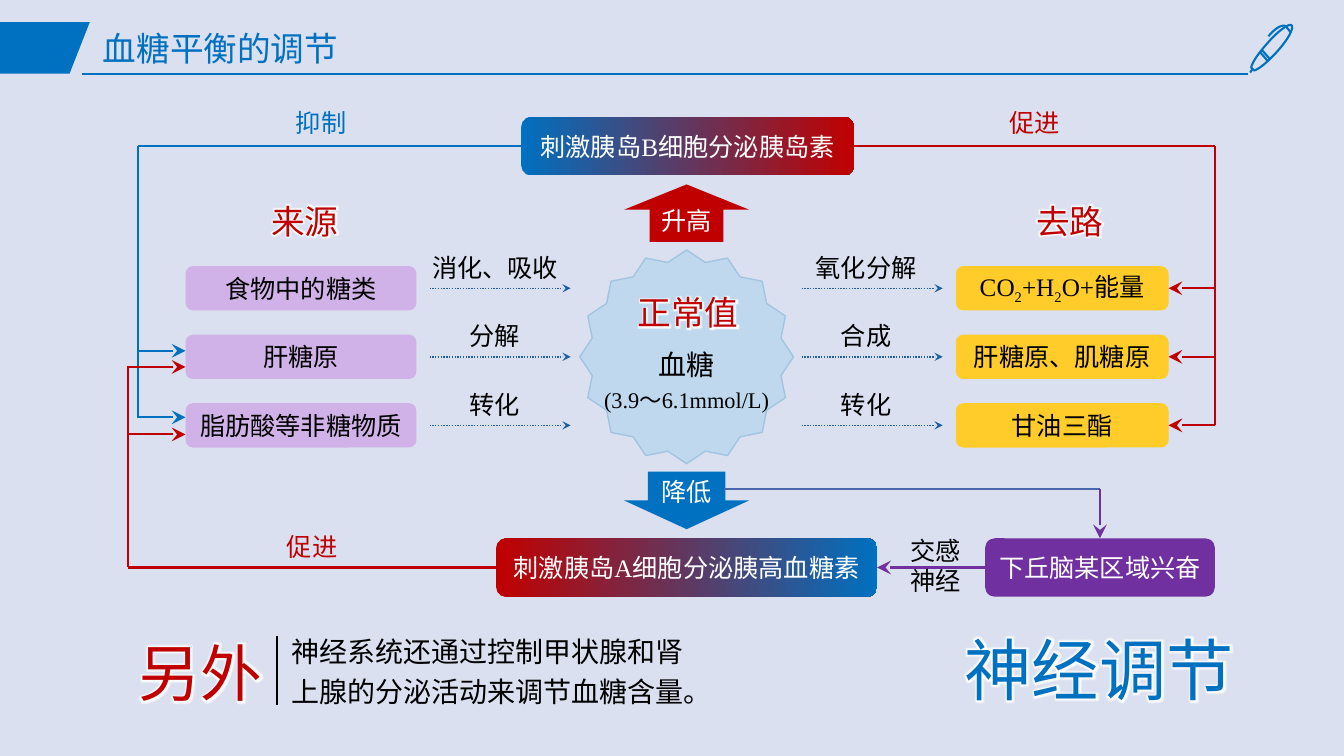
from dataclasses import dataclass

from lxml import etree
from pptx import Presentation
from pptx.dml.color import RGBColor
from pptx.enum.dml import MSO_LINE
from pptx.enum.shapes import MSO_CONNECTOR, MSO_SHAPE
from pptx.enum.text import MSO_ANCHOR, PP_ALIGN
from pptx.oxml.ns import qn
from pptx.shapes.autoshape import Shape
from pptx.shapes.connector import Connector
from pptx.slide import Slide
from pptx.text.text import TextFrame
from pptx.util import Inches, Pt

STRAIGHT, DOTTED = MSO_CONNECTOR.STRAIGHT, MSO_LINE.ROUND_DOT
ROUNDED, STAR = MSO_SHAPE.ROUNDED_RECTANGLE, MSO_SHAPE.STAR_16_POINT
UP, DOWN = MSO_SHAPE.UP_ARROW, MSO_SHAPE.DOWN_ARROW
LEFT, CENTER = PP_ALIGN.LEFT, PP_ALIGN.CENTER
TOP, MIDDLE = MSO_ANCHOR.TOP, MSO_ANCHOR.MIDDLE
SIDE_TOP, SIDE_LEFT, SIDE_RIGHT = 0, 1, 3

BACKGROUND = RGBColor(0xDA, 0xE0, 0xEF)
BLUE = RGBColor(0x00, 0x70, 0xC0)
RED = RGBColor(0xC0, 0x00, 0x00)
PURPLE = RGBColor(0x70, 0x30, 0xA0)
LILAC = RGBColor(0xD1, 0xB2, 0xE8)
YELLOW = RGBColor(0xFF, 0xCC, 0x29)
PALE_BLUE = RGBColor(0xC0, 0xD8, 0xED)
STAR_EDGE = RGBColor(0xA1, 0xC4, 0xE3)
DOT_BLUE = RGBColor(0x1F, 0x5F, 0xA0)
SLATE = RGBColor(0x4A, 0x66, 0xAC)
BLACK = RGBColor(0, 0, 0)
WHITE = RGBColor(0xFF, 0xFF, 0xFF)

SERIF, SANS = "Times New Roman", "Noto Sans CJK SC"
ROW_TOP, ROW_PITCH, ROW_HEIGHT = 2.64, 0.68, 0.44
Point = tuple[float, float]


@dataclass
class Box:
    text: str
    left: float
    top: float
    width: float
    height: float
    fill: tuple[RGBColor, ...]
    color: RGBColor = WHITE
    font: str = SERIF
    kind: int = ROUNDED
    adjustments: tuple[float, ...] = ()


@dataclass
class Label:
    text: str
    left: float
    top: float
    width: float
    height: float
    color: RGBColor = BLACK
    size: float = 18
    font: str = SANS
    align: int = CENTER
    wrap: bool = False
    glow: bool = False
    spacing: float = 1.0


@dataclass
class Line:
    start: Point
    end: Point
    color: RGBColor
    arrow: bool = False
    begin_box: Shape | None = None
    begin_side: int = 0
    end_box: Shape | None = None
    end_side: int = 0


def write(frame: TextFrame, lines: list[tuple[str, float]], font: str, color: RGBColor,
          align: int = CENTER, spacing: float = 1.0) -> None:
    for index, (text, size) in enumerate(lines):
        paragraph = frame.add_paragraph() if index else frame.paragraphs[0]
        paragraph.alignment, paragraph.line_spacing = align, spacing
        paragraph.font.size, paragraph.font.name = Pt(size), font
        paragraph.font.color.rgb = color
        latin = paragraph._p.pPr.find(qn("a:defRPr")).find(qn("a:latin"))
        latin.addnext(latin.makeelement(qn("a:ea"), {"typeface": SANS}))
        first, *rest = text.split("_")
        paragraph.add_run().text = first
        for chunk in rest:
            subscript = paragraph.add_run()
            subscript.text = chunk[0]
            subscript._r.get_or_add_rPr().set("baseline", "-25000")
            paragraph.add_run().text = chunk[1:]


def draw_box(slide: Slide, box: Box) -> Shape:
    shape = slide.shapes.add_shape(box.kind, Inches(box.left), Inches(box.top),
                                   Inches(box.width), Inches(box.height))
    shape.shadow.inherit = False
    shape.line.fill.background()
    for index, value in enumerate(box.adjustments):
        shape.adjustments[index] = value
    if len(box.fill) == 1:
        shape.fill.solid()
        shape.fill.fore_color.rgb = box.fill[0]
    else:
        shape.fill.gradient()
        shape.fill.gradient_angle = 0
        for position, (stop, color) in enumerate(zip(shape.fill.gradient_stops, box.fill)):
            stop.position, stop.color.rgb = position, color
    shape.text_frame.word_wrap = True
    shape.text_frame.vertical_anchor = MIDDLE
    if box.text:
        write(shape.text_frame, [(box.text, 18)], box.font, box.color)
    return shape


def draw_label(slide: Slide, label: Label) -> None:
    frame = slide.shapes.add_textbox(Inches(label.left), Inches(label.top),
                                     Inches(label.width), Inches(label.height)).text_frame
    frame.word_wrap, frame.vertical_anchor = label.wrap, TOP
    write(frame, [(label.text, label.size)], label.font, label.color, label.align, label.spacing)
    if label.glow:
        properties = frame.paragraphs[0].runs[0]._r.get_or_add_rPr()
        effects = etree.SubElement(properties, qn("a:effectLst"))
        glow = etree.SubElement(effects, qn("a:glow"), rad="63500")
        etree.SubElement(glow, qn("a:srgbClr"), val="FFFFFF")


def draw_line(slide: Slide, line: Line, width: float = 1.5, head: str = "lg") -> Connector:
    connector = slide.shapes.add_connector(STRAIGHT, *(Inches(v) for v in line.start + line.end))
    if line.begin_box is not None:
        connector.begin_connect(line.begin_box, line.begin_side)
    if line.end_box is not None:
        connector.end_connect(line.end_box, line.end_side)
    connector.line.color.rgb, connector.line.width = line.color, Pt(width)
    if line.arrow:
        etree.SubElement(connector.line._get_or_add_ln(), qn("a:tailEnd"),
                         type="stealth", w=head, len=head)
    etree.SubElement(connector._element.spPr, qn("a:effectLst"))
    return connector


def draw_outline(slide: Slide, strokes: list[list[Point]]) -> Shape:
    points = [[(Inches(x), Inches(y)) for x, y in stroke] for stroke in strokes]
    builder = slide.shapes.build_freeform(*points[0][0])
    for index, stroke in enumerate(points):
        if index:
            builder.move_to(*stroke[0])
        builder.add_line_segments(stroke[1:], close=stroke[0] == stroke[-1])
    shape = builder.convert_to_shape()
    shape.shadow.inherit = False
    return shape


def curve(points: list[Point], steps: int = 8) -> list[Point]:
    result = [points[0]]
    for first in range(0, len(points) - 1, 3):
        for step in range(1, steps + 1):
            t = step / steps
            weights = ((1 - t) ** 3, 3 * t * (1 - t) ** 2, 3 * t * t * (1 - t), t ** 3)
            corners = points[first:first + 4]
            result.append((sum(w * p[0] for w, p in zip(weights, corners)),
                           sum(w * p[1] for w, p in zip(weights, corners))))
    return result


def draw_header(slide: Slide) -> None:
    banner = draw_outline(slide, [[(0, 0.22), (0.89, 0.22), (0.69, 0.73), (0, 0.73), (0, 0.22)]])
    banner.fill.solid()
    banner.fill.fore_color.rgb = BLUE
    banner.line.fill.background()
    draw_line(slide, Line((0.81, 0.73), (12.38, 0.73), BLUE))
    barrel = curve([(12.81, 0.25), (12.79, 0.23), (12.68, 0.3), (12.57, 0.43), (12.48, 0.53),
                    (12.42, 0.62), (12.41, 0.67), (12.41, 0.67), (12.44, 0.7), (12.44, 0.7),
                    (12.48, 0.69), (12.57, 0.62), (12.66, 0.52), (12.77, 0.4), (12.84, 0.28),
                    (12.81, 0.25)])
    clip = curve([(12.8, 0.32), (12.8, 0.32), (12.78, 0.29), (12.75, 0.26),
                  (12.75, 0.26), (12.7, 0.22), (12.58, 0.36)])
    pen = draw_outline(slide, [[(12.57, 0.6), (12.5, 0.52)], [(12.52, 0.5), (12.59, 0.58)],
                               barrel, [(12.42, 0.69), (12.4, 0.72)], clip])
    pen.fill.background()
    pen.line.color.rgb, pen.line.width = BLUE, Pt(1.5)
    title = slide.shapes.title
    title.left, title.top, title.width, title.height = map(Inches, (0.92, 0.21, 11.5, 0.59))
    title.text_frame.vertical_anchor = MIDDLE
    write(title.text_frame, [("血糖平衡的调节", 24)], SERIF, BLUE, LEFT, 0.9)


def draw_rows(slide: Slide, names: list[str], steps: list[str], left: float, width: float,
              fill: RGBColor, arrow_left: float, step_center: float) -> list[Shape]:
    boxes = []
    for index, (name, step) in enumerate(zip(names, steps)):
        top = ROW_TOP + index * ROW_PITCH
        middle = top + ROW_HEIGHT / 2
        boxes.append(draw_box(slide, Box(name, left, top, width, ROW_HEIGHT, (fill,), BLACK)))
        arrow = Line((arrow_left, middle), (arrow_left + 1.4, middle), DOT_BLUE, True)
        draw_line(slide, arrow, 1, "med").line.dash_style = DOTTED
        draw_label(slide, Label(step, step_center - 0.75, top - 0.19, 1.5, 0.4))
    return boxes


def main() -> None:
    presentation = Presentation()
    presentation.slide_width, presentation.slide_height = Inches(13.33), Inches(7.5)
    slide = presentation.slides.add_slide(presentation.slide_layouts[5])
    slide.background.fill.solid()
    slide.background.fill.fore_color.rgb = BACKGROUND
    draw_header(slide)

    insulin, glucagon, hypothalamus, *_ = [draw_box(slide, box) for box in (
        Box("刺激胰岛B细胞分泌胰岛素", 5.17, 1.16, 3.3, 0.58, (BLUE, RED)),
        Box("刺激胰岛A细胞分泌胰高血糖素", 4.92, 5.34, 3.78, 0.58, (RED, BLUE)),
        Box("下丘脑某区域兴奋", 9.77, 5.34, 2.28, 0.58, (PURPLE,), font=SANS),
        Box("升高", 6.19, 1.83, 1.24, 0.57, (RED,), WHITE, SANS, UP, (0.59, 0.44)),
        Box("降低", 6.19, 4.68, 1.24, 0.57, (BLUE,), WHITE, SANS, DOWN, (0.62, 0.5)))]

    star = draw_box(slide, Box("", 5.75, 2.48, 2.12, 2.12, (PALE_BLUE,), kind=STAR,
                               adjustments=(0.45,)))
    star.line.color.rgb, star.line.width = STAR_EDGE, Pt(1)
    frame = star.text_frame
    frame.word_wrap = False
    frame.margin_left = frame.margin_right = frame.margin_bottom = 0
    frame.margin_top = Inches(0.4)
    write(frame, [("血糖", 20), ("(3.9～6.1mmol/L)", 16)], SERIF, BLACK, spacing=1.2)

    draw_rows(slide, ["食物中的糖类", "肝糖原", "脂肪酸等非糖物质"],
              ["消化、吸收", "分解", "转化"], 1.84, 2.29, LILAC, 4.26, 4.91)
    fates = draw_rows(slide, ["CO_2+H_2O+能量", "肝糖原、肌糖原", "甘油三酯"],
                      ["氧化分解", "合成", "转化"], 9.48, 2.11, YELLOW, 7.95, 8.59)

    lines = [
        Line((5.17, 1.45), (1.37, 1.45), BLUE, begin_box=insulin, begin_side=SIDE_LEFT),
        Line((1.37, 1.45), (1.37, 4.15), BLUE),
        Line((8.47, 1.45), (12.05, 1.45), RED, begin_box=insulin, begin_side=SIDE_RIGHT),
        Line((12.05, 1.45), (12.05, 4.22), RED),
        Line((4.92, 5.63), (1.27, 5.63), RED, begin_box=glucagon, begin_side=SIDE_LEFT),
        Line((1.27, 3.63), (1.27, 5.63), RED),
        Line((9.77, 5.63), (8.7, 5.63), PURPLE, True, hypothalamus, SIDE_LEFT,
             glucagon, SIDE_RIGHT),
        Line((7.18, 4.85), (10.91, 4.85), SLATE),
        Line((10.91, 4.85), (10.91, 5.34), PURPLE, True, end_box=hypothalamus,
             end_side=SIDE_TOP),
        Line((2.75, 6.31), (2.75, 6.99), BLACK)]
    lines += [Line((x, y), (1.84, y), color, True) for x, y, color in (
        (1.37, 3.48, BLUE), (1.37, 4.14, BLUE), (1.27, 3.64, RED), (1.27, 4.31, RED))]
    for index, fate in enumerate(fates):
        middle = ROW_TOP + index * ROW_PITCH + ROW_HEIGHT / 2
        lines.append(Line((12.05, middle), (11.59, middle), RED, True,
                          end_box=fate, end_side=SIDE_RIGHT))
    for line in lines:
        draw_line(slide, line)

    for label in (
            Label("抑制", 2.83, 1.02, 0.71, 0.4, BLUE),
            Label("促进", 9.91, 1.02, 0.71, 0.4, RED),
            Label("促进", 2.74, 5.22, 0.71, 0.4, RED),
            Label("来源", 2.45, 1.94, 1.15, 0.5, RED, 24, SERIF, glow=True),
            Label("去路", 9.99, 1.94, 1.24, 0.5, RED, 24, SERIF, glow=True),
            Label("正常值", 6.21, 2.85, 1.23, 0.5, RED, 24, SERIF, glow=True),
            Label("交感神经", 8.93, 5.26, 0.74, 0.71, align=LEFT, wrap=True),
            Label("神经系统还通过控制甲状腺和肾上腺的分泌活动来调节血糖含量。",
                  2.79, 6.18, 4.24, 0.88, size=20, align=LEFT, wrap=True, spacing=1.2),
            Label("另外", 1.28, 6.25, 1.44, 0.84, RED, 44, SERIF, LEFT, glow=True),
            Label("神经调节", 9.47, 6.18, 2.89, 0.91, BLUE, 48, SERIF, LEFT, glow=True)):
        draw_label(slide, label)
    presentation.save("out.pptx")


if __name__ == "__main__":
    main()
